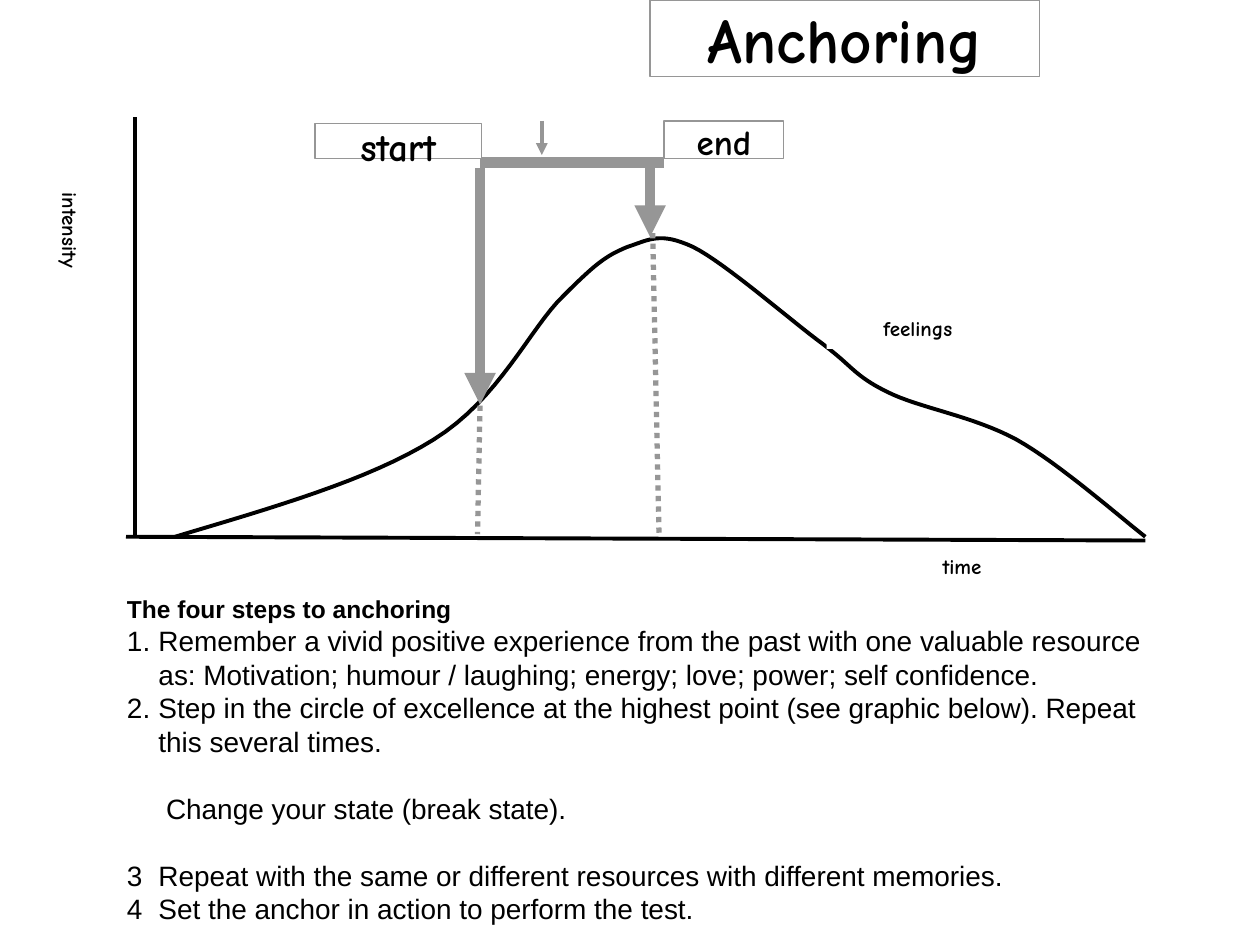
import pptx
import pptx.util
import pptx.dml.color
import pptx.enum.dml
import pptx.enum.shapes
import pptx.enum.text
import pptx.oxml.ns
import pptx.oxml.xmlchemy

BLACK, GRAY, WHITE = "000000", "969696", "FFFFFF"
qn = pptx.oxml.ns.qn
OxmlElement = pptx.oxml.xmlchemy.OxmlElement
Pt = pptx.util.Pt
ANCHOR = pptx.enum.text.MSO_ANCHOR
ALIGN = pptx.enum.text.PP_ALIGN


def paint(fill, color):
    fill.solid()
    fill.fore_color.rgb = pptx.dml.color.RGBColor.from_string(color)


def write(p, text, size=16, font="Arial", bold=False, align=ALIGN.LEFT,
          left=0, hanging=0, gap=0, numbered=False):
    r = p.add_run()
    r.text = text
    r.font.size, r.font.name, r.font.bold = Pt(size), font, bold
    paint(r.font.fill, BLACK)
    p.alignment = align
    p.space_before = p.space_after = Pt(gap)
    pPr = p._p.get_or_add_pPr()
    pPr.set("marL", str(int(left)))
    pPr.set("indent", str(-int(hanging)))
    if numbered:
        bullet = OxmlElement("a:buAutoNum")
        bullet.set("type", "arabicPeriod")
        pPr.append(bullet)


prs = pptx.Presentation()
prs.slide_width, prs.slide_height = pptx.util.Inches(10), pptx.util.Inches(7.5)
s = prs.slides.add_slide(prs.slide_layouts[5])
col, row = prs.slide_width / 100, prs.slide_height / 75

x, y = 13.9, 42.6
points = []
for x1, y1, x2, y2, x3, y3 in [
    (21.6, 40.3, 29.3, 38.1, 34.4, 34.9),
    (39.6, 31.7, 42.1, 26, 44.7, 23.5),
    (47.3, 20.9, 48.1, 20.3, 49.8, 19.6),
    (51.6, 19, 52.4, 18.4, 55, 19.6),
    (57.6, 20.9, 62.7, 25.4, 65.3, 27.3),
    (67.8, 29.2, 67.8, 29.8, 70.4, 31.1),
    (73, 32.4, 77.2, 33, 80.7, 34.9),
    (84.1, 36.8, 89.2, 41.3, 90.9, 42.6),
]:
    for step in range(1, 17):
        t = step / 16
        a, b, c, d = (1 - t) ** 3, 3 * t * (1 - t) ** 2, 3 * t * t * (1 - t), t ** 3
        points.append(((a * x + b * x1 + c * x2 + d * x3) * col,
                       (a * y + b * y1 + c * y2 + d * y3) * row))
    x, y = x3, y3
builder = s.shapes.build_freeform(int(13.9 * col), int(42.6 * row))
builder.add_line_segments(points, close=False)
sp = builder.convert_to_shape()
sp.shadow.inherit = False
sp.fill.background()
paint(sp.line.fill, BLACK)
sp.line.width = Pt(2.25)

for x1, y1, x2, y2, color, width, style in [
    (38.1, 12.9, 52.7, 12.9, GRAY, 6, "plain"),
    (38.1, 32.2, 37.9, 42.4, GRAY, 3, "dotted"),
    (51.8, 18.5, 52.3, 42.3, GRAY, 3, "dotted"),
    (38.1, 13.3, 38.1, 32.1, GRAY, 6, "arrow"),
    (51.6, 13.3, 51.6, 18.8, GRAY, 6, "arrow"),
    (43, 9.6, 43, 12.3, GRAY, 2.25, "arrow"),
    (10, 42.6, 90.9, 42.9, BLACK, 2.25, "plain"),
    (10.7, 9.3, 10.7, 42.6, BLACK, 2.25, "plain"),
]:
    sp = s.shapes.add_connector(
        pptx.enum.shapes.MSO_CONNECTOR.STRAIGHT,
        int(x1 * col), int(y1 * row), int(x2 * col), int(y2 * row))
    paint(sp.line.fill, color)
    sp.line.width = Pt(width)
    if style == "dotted":
        sp.line.dash_style = pptx.enum.dml.MSO_LINE.ROUND_DOT
    if style == "arrow":
        tail = OxmlElement("a:tailEnd")
        tail.set("type", "triangle")
        sp.line._get_or_add_ln().append(tail)
    sp._element.spPr.append(OxmlElement("a:effectLst"))

for text, left, top, width, height, size, framed in [
    ("Anchoring", 51.6, 0, 30.9, 6.1, 36, True),
    ("intensity", 3, 15.3, 3.6, 13.1, 12, False),
    ("start", 25, 9.8, 13.2, 2.8, 22, True),
    ("end", 52.7, 9.6, 9.5, 3, 20, True),
    ("time", 69.4, 43.9, 13.9, 2.3, 12, False),
    ("feelings", 65.6, 24.4, 14.5, 3.3, 12, False),
]:
    if text == "Anchoring":
        sp = s.shapes.title
    else:
        sp = s.shapes.add_shape(pptx.enum.shapes.MSO_SHAPE.RECTANGLE, 0, 0, 0, 0)
        sp.shadow.inherit = False
    sp.left, sp.top = int(left * col), int(top * row)
    sp.width, sp.height = int(width * col), int(height * row)
    paint(sp.fill, WHITE)
    if framed:
        paint(sp.line.fill, GRAY)
        sp.line.width = Pt(0.75)
    else:
        sp.line.fill.background()
    tf = sp.text_frame
    tf.auto_size = pptx.enum.text.MSO_AUTO_SIZE.NONE
    tf.word_wrap = True
    tf.margin_left = tf.margin_right = tf.margin_top = tf.margin_bottom = 0
    tf.vertical_anchor = ANCHOR.MIDDLE if text == "feelings" else ANCHOR.TOP
    if text == "intensity":
        tf._txBody.find(qn("a:bodyPr")).set("vert", "eaVert")
    write(tf.paragraphs[0], text, size=size, font="Comic Neue", bold=True, align=ALIGN.CENTER)

sp = s.shapes.add_textbox(int(9.1 * col), int(46.2 * row), int(82.7 * col), int(27.4 * row))
tf = sp.text_frame
tf.word_wrap = True
tf.vertical_anchor = ANCHOR.MIDDLE
tf.margin_left = tf.margin_right = int(col)
tf.margin_top, tf.margin_bottom = int(0.8 * row), 0
write(tf.paragraphs[0], "The four steps to anchoring", size=14, bold=True)
item = dict(left=2.5 * col, hanging=2.5 * col)
for text, form in [
    ("Remember a vivid positive experience from the past with one valuable resource as: "
     "Motivation; humour / laughing; energy; love; power; self confidence.",
     dict(item, numbered=True)),
    ("Step in the circle of excellence at the highest point (see graphic below). "
     "Repeat this several times.", dict(item, numbered=True)),
    ("Change your state (break state).", dict(left=3.1 * col, gap=19)),
    ("3\tRepeat with the same or different resources with different memories.", item),
    ("4\tSet the anchor in action to perform the test.", item),
]:
    write(tf.add_paragraph(), text, **form)

prs.save("out.pptx")
